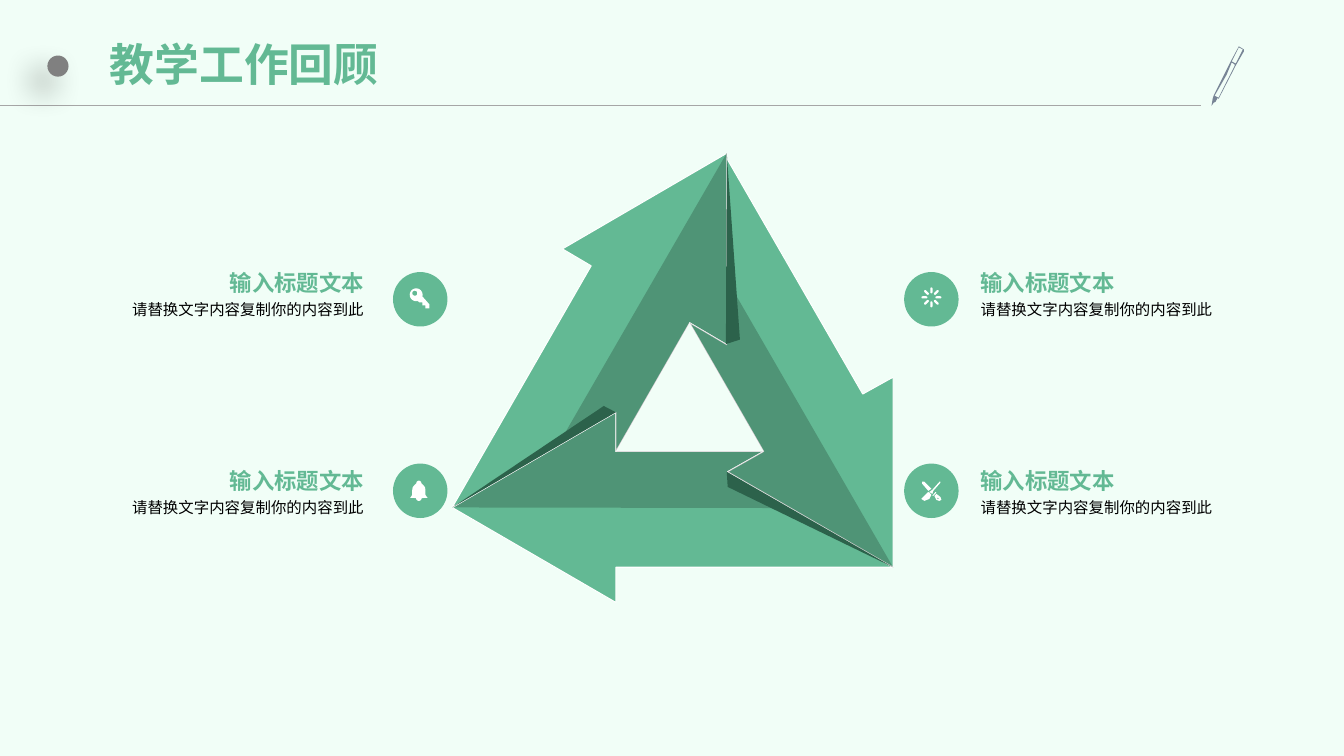
from dataclasses import dataclass
from itertools import chain
from math import cos, radians, sin

from lxml.etree import SubElement
from pptx import Presentation
from pptx.dml.color import RGBColor
from pptx.enum.shapes import MSO_CONNECTOR, MSO_SHAPE
from pptx.enum.text import MSO_ANCHOR, MSO_AUTO_SIZE, PP_ALIGN
from pptx.oxml.ns import qn
from pptx.shapes.autoshape import Shape
from pptx.slide import Slide
from pptx.text.text import TextFrame
from pptx.util import Pt

Point = tuple[float, float]
Contour = list[Point]

COLORS = {
    "mint": "F1FEF7", "green": "63B994", "fold": "2C624B", "shade": "000000",
    "text": "000000", "white": "FFFFFF", "rule": "A6A6A6", "dot": "808080", "pen": "778495",
}
TITLE_FONT = "Noto Sans CJK SC"
BODY_FONT = "Arial"
BADGE_SIZE = 38.9


@dataclass
class Arrow:
    outline: Contour
    inner_half: Contour


@dataclass
class Topic:
    badge_center: Point
    text_left: float
    text_top: float
    align: PP_ALIGN
    icon: list[Contour]


def rgb(name: str) -> RGBColor:
    return RGBColor.from_string(COLORS[name])


def arc(center: Point, radius: float, start: float, end: float, steps: int = 20) -> Contour:
    """Points on an arc; angles in degrees, clockwise from the right."""
    angles = [radians(start + (end - start) * i / steps) for i in range(steps + 1)]
    return [(center[0] + radius * cos(a), center[1] + radius * sin(a)) for a in angles]


def spoke(angle: float) -> Contour:
    """Round-ended bar of the spinner icon."""
    def on_ray(distance: float) -> Point:
        return distance * cos(radians(angle)), distance * sin(radians(angle)) - 1.4

    return (arc(on_ray(6.3), 0.8, angle - 90, angle + 90, 8)
            + arc(on_ray(3.7), 0.8, angle + 90, angle + 270, 8))


def draw_outline(slide: Slide, contours: list[Contour], color: str,
                 origin: Point = (0, 0), opacity: int = 100, edge: str = "") -> Shape:
    placed = [[(Pt(x + origin[0]), Pt(y + origin[1])) for x, y in c] for c in contours]
    builder = slide.shapes.build_freeform(*placed[0][0], scale=1.0)
    builder.add_line_segments(placed[0][1:], close=True)
    for contour in placed[1:]:
        builder.move_to(*contour[0])
        builder.add_line_segments(contour[1:], close=True)
    outline = builder.convert_to_shape()
    outline.shadow.inherit = False
    outline.fill.solid()
    outline.fill.fore_color.rgb = rgb(color)
    if opacity < 100:
        fill_color = outline.fill._xPr.find(qn("a:solidFill"))[0]
        SubElement(fill_color, qn("a:alpha"), val=str(opacity * 1000))
    if edge:
        outline.line.color.rgb = rgb(edge)
        outline.line.width = Pt(0.75)
    else:
        outline.line.fill.background()
    return outline


def draw_disc(slide: Slide, center: Point, size: float, color: str) -> Shape:
    disc = slide.shapes.add_shape(MSO_SHAPE.OVAL, Pt(center[0] - size / 2),
                                  Pt(center[1] - size / 2), Pt(size), Pt(size))
    disc.shadow.inherit = False
    disc.fill.solid()
    disc.fill.fore_color.rgb = rgb(color)
    disc.line.fill.background()
    return disc


def write(frame: TextFrame, text: str, size: float, color: str, font_name: str,
          bold: bool, align: PP_ALIGN, spacing: float) -> None:
    paragraph = frame.paragraphs[0]
    paragraph.text = text
    paragraph.alignment = align
    paragraph.line_spacing = spacing
    paragraph.font.size = Pt(size)
    paragraph.font.bold = bold
    paragraph.font.color.rgb = rgb(color)
    paragraph.font.name = font_name


def draw_topic(slide: Slide, topic: Topic) -> None:
    draw_disc(slide, topic.badge_center, BADGE_SIZE, "green")
    draw_outline(slide, topic.icon, "white", topic.badge_center)
    lines = [("输入标题文本", 0, 19.4, 16, "green", True, 1.0),
             ("请替换文字内容复制你的内容到此", 19.4, 42.5, 11, "text", False, 1.2)]
    for text, offset, height, size, color, bold, spacing in lines:
        box = slide.shapes.add_textbox(Pt(topic.text_left), Pt(topic.text_top + offset),
                                       Pt(203.8), Pt(height))
        frame = box.text_frame
        frame.word_wrap = True
        frame.margin_left = frame.margin_right = Pt(11.5)
        frame.margin_top = frame.margin_bottom = 0
        write(frame, text, size, color, BODY_FONT, bold, topic.align, spacing)


# Corners shared by the three arrows
LEFT_TIP, TOP_TIP, RIGHT_TIP = (323, 362.5), (519.1, 109.5), (637.9, 405.2)
HOLE_TOP, HOLE_LEFT, HOLE_RIGHT = (492.6, 230.6), (439.9, 322.5), (545.5, 322.5)
LEFT_BARB, TOP_BARB, RIGHT_BARB = (439.9, 294.5), (519.1, 246.2), (519.8, 337)

ARROWS = [
    Arrow([RIGHT_TIP, (439.9, 405.2), (439.9, 430.3), LEFT_TIP, LEFT_BARB,
           HOLE_LEFT, HOLE_RIGHT, RIGHT_BARB],
          [(563.8, 362.9), LEFT_TIP, LEFT_BARB, HOLE_LEFT, HOLE_RIGHT, RIGHT_BARB]),
    Arrow([TOP_TIP, TOP_BARB, HOLE_TOP, HOLE_LEFT, LEFT_BARB, LEFT_TIP,
           (422.3, 189.9), (401.8, 177.8)],
          [TOP_TIP, TOP_BARB, HOLE_TOP, HOLE_LEFT, LEFT_BARB, (398.9, 317.5)]),
    Arrow([(637.9, 269.5), RIGHT_TIP, RIGHT_BARB, HOLE_RIGHT, HOLE_TOP, TOP_BARB,
           (519.1, 113), (616.3, 281.5)],
          [RIGHT_TIP, RIGHT_BARB, HOLE_RIGHT, HOLE_TOP, TOP_BARB, (519.1, 199.4)]),
]
FOLDS = [
    [RIGHT_TIP, (519.8, 347.8), (519.1, 337)],
    [LEFT_TIP, (431.3, 290), LEFT_BARB],
    [TOP_TIP, (528.5, 242.6), (518.5, 245.8)],
]

# Icons, measured from the badge centre
KEY = [arc((-2.9, -3.2), 4.6, 75, 375)
       + [(6.5, 3.6), (6.5, 6.5), (3.6, 6.5), (3.6, 4.4), (1.5, 4.4), (1.5, 2.2), (-0.7, 2.2)],
       arc((-3.9, -4.3), 1.8, 0, 360)]
BELL = [arc((-1, -5.4), 1.8, 180, 360)
        + [(2.2, -4), (3.4, -2.5), (3.7, -0.7), (3.7, 2.9), (5.2, 5.1)]
        + arc((-1, 5.2), 2, 0, 180)
        + [(-7.2, 5.1), (-5.7, 2.9), (-5.7, -0.7), (-5.4, -2.5), (-4.2, -4)]]
SPINNER = [spoke(angle) for angle in range(0, 360, 45)]
BRUSHES = [
    [(3.6, 2.2), (2.2, 3.6), (3.6, 6.5), (5.7, 7.2), (7.2, 6.5), (6.5, 4.4)],
    arc((4.7, 5.4), 0.5, 0, 360),
    [(2.9, 0.8), (0.7, 3.6), (1.4, 3.6), (3.6, 1.4)],
    [(-2.2, 0), (0, -1.4), (-5, -6.5), (-6.5, -6.5), (-6.5, -5)],
    [(-1.4, 1.4), (-2.2, 0.8), (-5, 3.6), (-7.2, 5.8), (-5, 7.2), (-1.4, 5.8), (0, 2.9)],
    [(1.4, 0), (6.5, -5.8), (6.5, -6.5), (5.8, -6.5), (0.7, -0.7), (-1.4, 0.8), (0.7, 2.2)],
]
PEN = [
    [(888.5, 35.3), (884.9, 33.1), (879.1, 43.9), (866.9, 68.4), (866.2, 70.6), (865.4, 75.6),
     (866.9, 73.4), (868.3, 72.7), (869.8, 69.8), (870.5, 70.6), (882.7, 46.8), (888.5, 36.7)],
    [(882, 46.8), (870.5, 69.8), (867.6, 68.4), (876.2, 53.3), (879.8, 44.6), (882, 46.1)],
    [(882.7, 45.4), (879.8, 43.9), (884.9, 33.8), (887.8, 35.3)],
]
TOPICS = [
    Topic((300.2, 213.8), 67.7, 192.2, PP_ALIGN.RIGHT, KEY),
    Topic((300.2, 350.6), 67.7, 333.4, PP_ALIGN.RIGHT, BELL),
    Topic((665.3, 213.8), 689, 192.2, PP_ALIGN.LEFT, SPINNER),
    Topic((665.3, 350.6), 689, 333.4, PP_ALIGN.LEFT, BRUSHES),
]


def draw_header(slide: Slide) -> None:
    title = slide.shapes.title
    title.left, title.top, title.width, title.height = Pt(73.4), Pt(13.7), Pt(785.5), Pt(67.7)
    frame = title.text_frame
    frame.auto_size = MSO_AUTO_SIZE.NONE
    frame.vertical_anchor = MSO_ANCHOR.MIDDLE
    frame.margin_left = frame.margin_right = Pt(5)
    frame.margin_top = frame.margin_bottom = Pt(2.9)
    write(frame, "教学工作回顾", 32, "green", TITLE_FONT, True, PP_ALIGN.LEFT, 0.9)
    title_font = frame.paragraphs[0]._p.pPr.find(qn("a:defRPr"))
    SubElement(title_font, qn("a:ea"), typeface=TITLE_FONT)

    rule = slide.shapes.add_connector(MSO_CONNECTOR.STRAIGHT, 0, Pt(75.4), Pt(858), Pt(75.4))
    rule.line.color.rgb = rgb("rule")
    rule.line.width = Pt(0.75)
    SubElement(rule._element.spPr, qn("a:effectLst"))

    # Dot with a soft shadow to the lower left
    dot = draw_disc(slide, (41.4, 47.2), 15.1, "dot")
    effects = dot._element.spPr.find(qn("a:effectLst"))
    shadow = SubElement(effects, qn("a:outerShdw"), blurRad=str(Pt(22)), dist=str(Pt(15)),
                        dir=str(135 * 60000), algn="tr", rotWithShape="0")
    shadow_color = SubElement(shadow, qn("a:srgbClr"), val=COLORS["shade"])
    SubElement(shadow_color, qn("a:alpha"), val="40000")
    draw_outline(slide, PEN, "pen")


def main() -> None:
    deck = Presentation()
    deck.slide_width, deck.slide_height = Pt(960), Pt(540)
    slide = deck.slides.add_slide(deck.slide_layouts[5])
    slide.background.fill.solid()
    slide.background.fill.fore_color.rgb = rgb("mint")
    draw_header(slide)

    # Triangle of folded arrows
    for arrow in ARROWS:
        draw_outline(slide, [arrow.outline], "green", edge="white")
        draw_outline(slide, [arrow.inner_half], "shade", opacity=20)
    for fold in FOLDS:
        draw_outline(slide, [fold], "fold")

    for topic in TOPICS:
        draw_topic(slide, topic)
    deck.save("out.pptx")


if __name__ == "__main__":
    main()
